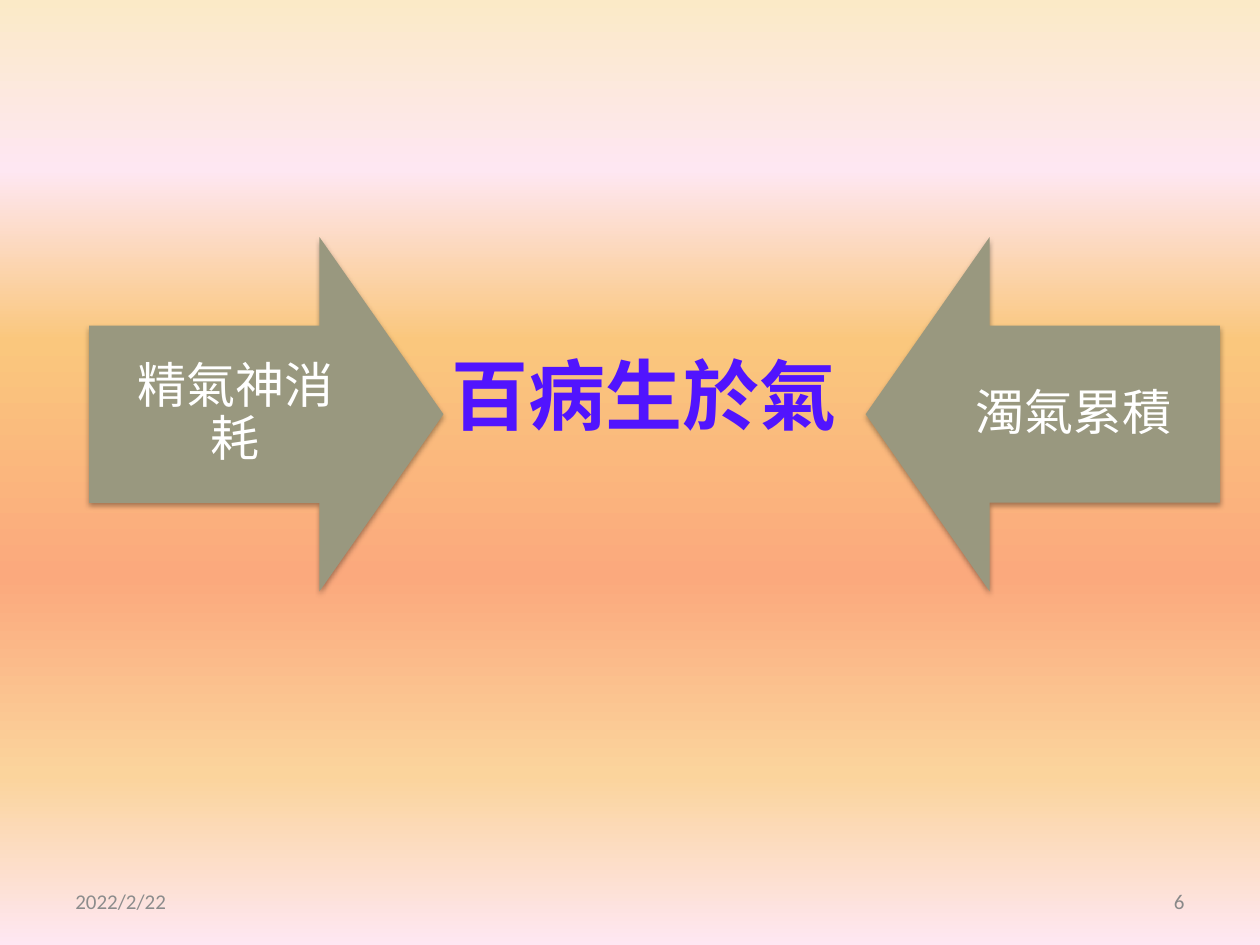
from dataclasses import dataclass

from lxml import etree
from pptx import Presentation
from pptx.dml.color import RGBColor
from pptx.enum.shapes import MSO_SHAPE
from pptx.enum.text import MSO_ANCHOR, PP_ALIGN
from pptx.oxml import parse_xml
from pptx.oxml.ns import nsdecls, qn
from pptx.util import Cm, Pt

DOWN_ARROW = MSO_SHAPE.DOWN_ARROW
MIDDLE = MSO_ANCHOR.MIDDLE
LEFT, CENTER, RIGHT = PP_ALIGN.LEFT, PP_ALIGN.CENTER, PP_ALIGN.RIGHT
TITLE_ONLY = 5
CJK_FONT = "Noto Sans CJK SC"
BACKGROUND_STOPS = [(0, "FBEAC7"), (18, "FEE7F2"), (36, "FAC77D"),
                    (61, "FBA97D"), (82, "FBD49C"), (100, "FEE7F2")]
ARROW_TOP, ARROW_SIZE = 4.78, 7.14
LABEL_WIDTH, LABEL_HEIGHT = 5.89, 3.58


@dataclass
class Cause:
    text: str
    arrow_left: float
    label_left: float
    rotation: int


CAUSES = [Cause("精氣神消耗", 1.8, 1.8, 270),
          Cause("濁氣累積", 17.45, 18.69, 90)]


def color(value: str) -> RGBColor:
    return RGBColor.from_string(value)


def place(shape, left: float, top: float, width: float, height: float) -> None:
    shape.left, shape.top = Cm(left), Cm(top)
    shape.width, shape.height = Cm(width), Cm(height)


def write(shape, text: str, *, size: float, font: str, fill: str, align=LEFT,
          bold: bool = False, inset: float | None = None,
          line_spacing: float | None = None) -> None:
    frame = shape.text_frame
    frame.word_wrap = True
    frame.vertical_anchor = MIDDLE
    if inset is not None:
        frame.margin_left = frame.margin_right = Cm(inset)
        frame.margin_top = frame.margin_bottom = Cm(inset)
    paragraph = frame.paragraphs[0]
    paragraph.alignment = align
    paragraph.line_spacing = line_spacing
    run = paragraph.add_run()
    run.text = text
    run.font.size, run.font.bold, run.font.name = Pt(size), bold, font
    run.font.color.rgb = color(fill)
    # East Asian glyphs take their own typeface element
    latin = run.font._element.find(qn("a:latin"))
    east_asian = parse_xml(f'<a:ea {nsdecls("a")} typeface="{CJK_FONT}"/>')
    latin.addnext(east_asian)


def add_text(slide, box: tuple[float, ...], text: str, **text_format) -> None:
    shape = slide.shapes.add_textbox(0, 0, 0, 0)
    place(shape, *box)
    write(shape, text, **text_format)


def paint_background(slide) -> None:
    fill = slide.background.fill
    fill.gradient()
    fill.gradient_angle = 270
    stops = slide.background._cSld.find(".//" + qn("a:gsLst"))
    for stop in list(stops):
        stops.remove(stop)
    for position, value in BACKGROUND_STOPS:
        stop = etree.SubElement(stops, qn("a:gs"), pos=str(position * 1000))
        etree.SubElement(stop, qn("a:srgbClr"), val=value)


def add_shadow(shape) -> None:
    shape.shadow.inherit = False
    effects = shape._element.spPr.find(qn("a:effectLst"))
    effects.append(parse_xml(
        f'<a:outerShdw {nsdecls("a")} blurRad="{Pt(3.1)}" dist="{Pt(1.8)}" '
        'dir="5400000" rotWithShape="0"><a:srgbClr val="000000">'
        '<a:alpha val="35000"/></a:srgbClr></a:outerShdw>'))


def add_cause(slide, cause: Cause) -> None:
    arrow = slide.shapes.add_shape(DOWN_ARROW, 0, 0, 0, 0)
    place(arrow, cause.arrow_left, ARROW_TOP, ARROW_SIZE, ARROW_SIZE)
    arrow.rotation = cause.rotation
    arrow.adjustments[0], arrow.adjustments[1] = 0.5, 0.35
    arrow.fill.solid()
    arrow.fill.fore_color.rgb = color("99987F")
    arrow.line.fill.background()
    add_shadow(arrow)

    label_top = ARROW_TOP + (ARROW_SIZE - LABEL_HEIGHT) / 2
    add_text(slide, (cause.label_left, label_top, LABEL_WIDTH, LABEL_HEIGHT),
             cause.text, size=28, font=CJK_FONT, fill="FFFFFF", align=CENTER,
             inset=0.56, line_spacing=0.9)


def main() -> None:
    presentation = Presentation()
    presentation.slide_width, presentation.slide_height = Cm(25.4), Cm(19.05)
    slide = presentation.slides.add_slide(presentation.slide_layouts[TITLE_ONLY])
    paint_background(slide)

    # Central statement
    title = slide.shapes.title
    place(title, 8.33, 6.35, 9.32, 3.18)
    write(title, "百病生於氣", size=44, font="Arial", fill="5114FE",
          align=CENTER, bold=True)

    # Footer: date and slide number
    add_text(slide, (1.27, 17.65, 5.92, 1.02), "2022/2/22", size=12,
             font="Calibri", fill="8C8C8C")
    add_text(slide, (18.21, 17.65, 5.92, 1.02), "6", size=12,
             font="Calibri", fill="898989", align=RIGHT)

    # Arrows pointing at the statement from both sides
    for cause in CAUSES:
        add_cause(slide, cause)

    presentation.save("out.pptx")


if __name__ == "__main__":
    main()
